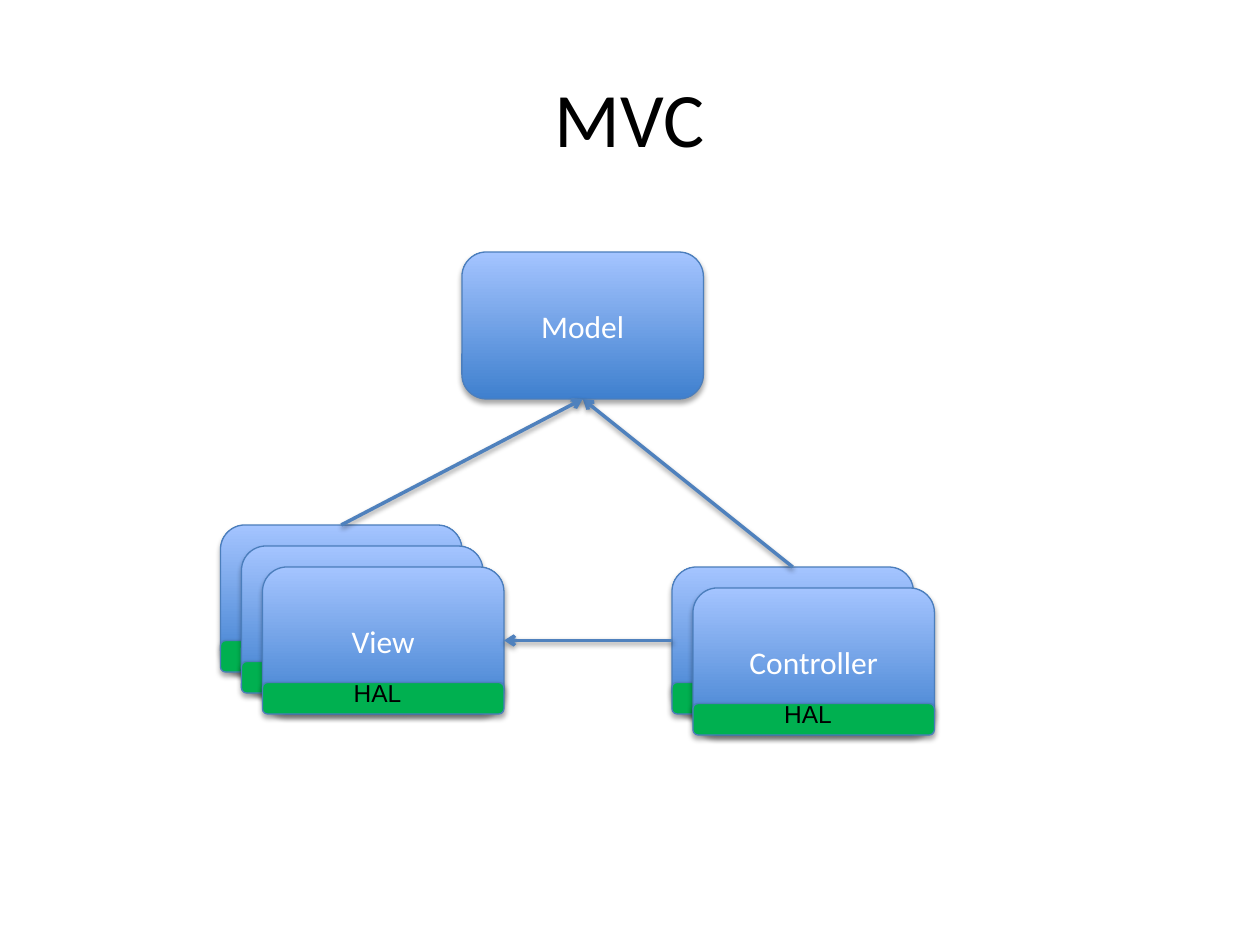
from dataclasses import dataclass

from lxml import etree
from pptx import Presentation
from pptx.dml.color import RGBColor
from pptx.enum import shapes, text
from pptx.oxml import ns
from pptx.util import Pt


@dataclass(frozen=True)
class Theme:
    card_bottom: str = "3F80CE"
    card_top: str = "A4C4FF"
    outline: str = "4B7EBC"
    arrow: str = "4F81BD"
    strip: str = "00B050"
    light: str = "FFFFFF"
    dark: str = "000000"
    title_size: int = 44
    card_size: int = 18
    strip_size: int = 14
    font: str = "Calibri"
    strip_font: str = "Arial"


THEME = Theme()
CARD_WIDTH, CARD_HEIGHT = 138, 84
STRIP_HEIGHT = 18
STACK_STEP = 12
TOP, LEFT, BOTTOM, RIGHT = range(4)  # connection sites of a card


def color(value):
    return RGBColor.from_string(value)


def write(frame, content, *, size, fill, font=THEME.font, align=text.PP_ALIGN.CENTER,
          anchor=text.MSO_ANCHOR.MIDDLE, wrap=True):
    frame.word_wrap = wrap
    frame.vertical_anchor = anchor
    paragraph = frame.paragraphs[0]
    paragraph.alignment = align
    run = paragraph.add_run()
    run.text = content
    run.font.name = font
    run.font.size = Pt(size)
    run.font.color.rgb = color(fill)


def add_shadow(properties, opacity, distance):
    """Put a soft downward shadow in the effect list of the shape properties."""
    effects = properties.find(ns.qn("a:effectLst"))
    if effects is None:
        effects = etree.SubElement(properties, ns.qn("a:effectLst"))
    shadow = etree.SubElement(
        effects, ns.qn("a:outerShdw"), blurRad=str(Pt(3.1)), dist=str(Pt(distance)),
        dir="5400000", rotWithShape="0")
    tint = etree.SubElement(shadow, ns.qn("a:srgbClr"), val=THEME.dark)
    etree.SubElement(tint, ns.qn("a:alpha"), val=str(opacity * 1000))


def add_rounded_box(parent, left, top, height):
    box = parent.add_shape(shapes.MSO_SHAPE.ROUNDED_RECTANGLE,
                           Pt(left), Pt(top), Pt(CARD_WIDTH), Pt(height))
    box.line.color.rgb = color(THEME.outline)
    box.line.width = Pt(0.75)
    box.shadow.inherit = False
    add_shadow(box._element.spPr, 35, 1.8)
    return box


def add_card(parent, left, top, label=None):
    card = add_rounded_box(parent, left, top, CARD_HEIGHT)
    card.fill.gradient()
    card.fill.gradient_angle = 90
    for stop, value in zip(card.fill.gradient_stops, (THEME.card_bottom, THEME.card_top)):
        stop.color.rgb = color(value)
    if label:
        write(card.text_frame, label, size=THEME.card_size, fill=THEME.light)
    return card


def add_strip(parent, left, top, label=None):
    """Add the green strip along the foot of the card at left, top."""
    strip = add_rounded_box(parent, left, top + CARD_HEIGHT - STRIP_HEIGHT, STRIP_HEIGHT)
    strip.fill.solid()
    strip.fill.fore_color.rgb = color(THEME.strip)
    if label:
        box = parent.add_textbox(Pt(left + 45), Pt(top + 60), Pt(42), Pt(24.2))
        write(box.text_frame, label, size=THEME.strip_size, fill=THEME.dark,
              font=THEME.strip_font, align=text.PP_ALIGN.LEFT,
              anchor=text.MSO_ANCHOR.TOP, wrap=False)
        box.text_frame.auto_size = text.MSO_AUTO_SIZE.SHAPE_TO_FIT_TEXT


def add_stack(slide, left, top, count, label):
    """Add overlapping cards, the front one labelled; return them back to front."""
    cards = []
    for index in range(count):
        front = index == count - 1
        group = slide.shapes.add_group_shape().shapes
        corner = left + index * STACK_STEP, top + index * STACK_STEP
        cards.append(add_card(group, *corner, label if front else None))
        add_strip(group, *corner, "HAL" if front else None)
    return cards


def add_arrow(slide, source, source_site, target, target_site):
    arrow = slide.shapes.add_connector(shapes.MSO_CONNECTOR.STRAIGHT, 0, 0, 0, 0)
    arrow.begin_connect(source, source_site)
    arrow.end_connect(target, target_site)
    arrow.line.color.rgb = color(THEME.arrow)
    arrow.line.width = Pt(2)
    etree.SubElement(arrow.line._get_or_add_ln(), ns.qn("a:tailEnd"), type="arrow")
    add_shadow(arrow._element.spPr, 38, 1.6)


def add_title(slide, content):
    title = slide.shapes.title
    title.left, title.top, title.width, title.height = Pt(36), Pt(21.6), Pt(648), Pt(90)
    write(title.text_frame, content, size=THEME.title_size, fill=THEME.dark)


def main():
    presentation = Presentation()
    presentation.slide_width, presentation.slide_height = Pt(720), Pt(540)
    slide = presentation.slides.add_slide(presentation.slide_layouts[5])
    add_title(slide, "MVC")

    model = add_card(slide.shapes, 264, 144, "Model")
    views = add_stack(slide, 126, 300, 3, "View")
    controllers = add_stack(slide, 384, 324, 2, "Controller")

    add_arrow(slide, controllers[0], LEFT, views[-1], RIGHT)
    add_arrow(slide, controllers[0], TOP, model, BOTTOM)
    add_arrow(slide, views[0], TOP, model, BOTTOM)
    presentation.save("out.pptx")


if __name__ == "__main__":
    main()
